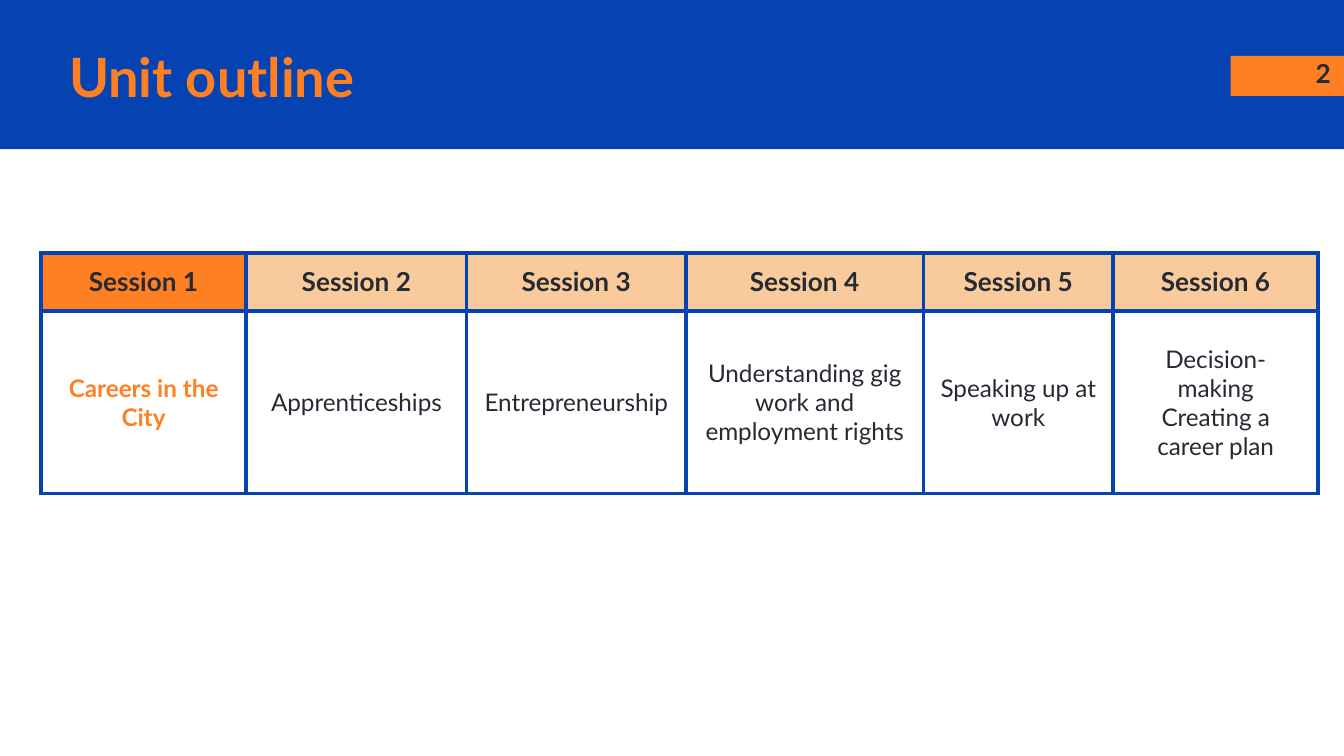
"""Build the unit outline slide with its table of six sessions."""
from lxml import etree
from pptx import Presentation
from pptx.dml.color import RGBColor
from pptx.enum.shapes import MSO_SHAPE
from pptx.enum.text import MSO_ANCHOR, MSO_AUTO_SIZE, PP_ALIGN
from pptx.oxml.ns import qn
from pptx.util import Pt

RECT = MSO_SHAPE.RECTANGLE
TOP, MIDDLE = MSO_ANCHOR.TOP, MSO_ANCHOR.MIDDLE
LEFT, CENTER, RIGHT = PP_ALIGN.LEFT, PP_ALIGN.CENTER, PP_ALIGN.RIGHT
NO_FIT = MSO_AUTO_SIZE.NONE
COLORS = {"blue": "0543B3", "orange": "FF8022", "peach": "F9CB9C",
          "dark": "262A33", "white": "FFFFFF"}
TOPICS = ["Careers in the City", "Apprenticeships", "Entrepreneurship",
          "Understanding gig work and employment rights",
          "Speaking up at work", "Decision- making\nCreating a career plan"]
WIDTHS = [110, 118.1, 117.4, 127.4, 101.5, 110]
HEIGHTS = [31, 97.7]


class Deck:
    def __init__(self, prs):
        self.font = "Lato"
        self.inset = Pt(7.2)
        self.border = Pt(2.25)
        self.s = prs.slides.add_slide(prs.slide_layouts[5])

    def rgb(self, name):
        return RGBColor.from_string(COLORS[name])

    def place(self, sp, x, y, w, h):
        sp.left, sp.top, sp.width, sp.height = Pt(x), Pt(y), Pt(w), Pt(h)

    def set_text(self, tf, text, size, color, bold, align):
        tf.text = text
        tf.word_wrap = True
        for p in tf.paragraphs:
            p.alignment = align
            p.font.name = self.font
            p.font.size = Pt(size)
            p.font.bold = bold
            p.font.color.rgb = self.rgb(color)

    def pad(self, box):
        box.margin_left = box.margin_right = self.inset
        box.margin_top = box.margin_bottom = self.inset

    def rect(self, x, y, w, h, color):
        sp = self.s.shapes.add_shape(RECT, Pt(x), Pt(y), Pt(w), Pt(h))
        sp.shadow.inherit = False
        sp.fill.solid()
        sp.fill.fore_color.rgb = self.rgb(color)
        sp.line.fill.background()

    def title(self, text, x, y, w, h):
        sp = self.s.shapes.title
        self.place(sp, x, y, w, h)
        sp.element.getparent().append(sp.element)
        tf = sp.text_frame
        self.set_text(tf, text, 29, "orange", True, LEFT)
        self.pad(tf)
        tf.auto_size = NO_FIT
        tf.vertical_anchor = MIDDLE

    def number(self, text, x, y, w, h):
        tf = self.s.shapes.add_textbox(Pt(x), Pt(y), Pt(w), Pt(h)).text_frame
        self.set_text(tf, text, 14, "dark", True, RIGHT)
        self.pad(tf)

    def cell(self, cell, text, size, color, bold, fill, anchor):
        self.set_text(cell.text_frame, text, size, color, bold, CENTER)
        self.pad(cell)
        cell.vertical_anchor = anchor
        tc_pr = cell._tc.get_or_add_tcPr()
        for side in ("a:lnL", "a:lnR", "a:lnT", "a:lnB"):
            ln = etree.SubElement(tc_pr, qn(side), w=str(self.border))
            solid = etree.SubElement(ln, qn("a:solidFill"))
            etree.SubElement(solid, qn("a:srgbClr"), val=COLORS["blue"])
        cell.fill.solid()
        cell.fill.fore_color.rgb = self.rgb(fill)

    def sessions(self, topics, x, y):
        shape = self.s.shapes.add_table(2, len(topics), Pt(x), Pt(y),
                                        Pt(sum(WIDTHS)), Pt(sum(HEIGHTS)))
        table = shape.table
        table.first_row = table.horz_banding = False
        for row, height in zip(table.rows, HEIGHTS):
            row.height = Pt(height)
        for i, (topic, width) in enumerate(zip(topics, WIDTHS)):
            table.columns[i].width = Pt(width)
            current = i == 0
            self.cell(table.cell(0, i), f"Session {i + 1}", 14, "dark", True,
                      "orange" if current else "peach", TOP)
            self.cell(table.cell(1, i), topic, 13,
                      "orange" if current else "dark", current, "white", MIDDLE)


def main():
    prs = Presentation()
    prs.slide_width, prs.slide_height = Pt(720), Pt(405)
    deck = Deck(prs)
    deck.rect(0, 0, 720, 80, "blue")
    deck.rect(659.2, 30, 60.8, 21.4, "orange")
    deck.number("2", 676.8, 23.8, 43.2, 31)
    deck.title("Unit outline", 29.8, 20.4, 609, 40.3)
    deck.sessions(TOPICS, 21.9, 135.4)
    prs.save("out.pptx")


if __name__ == "__main__":
    main()
